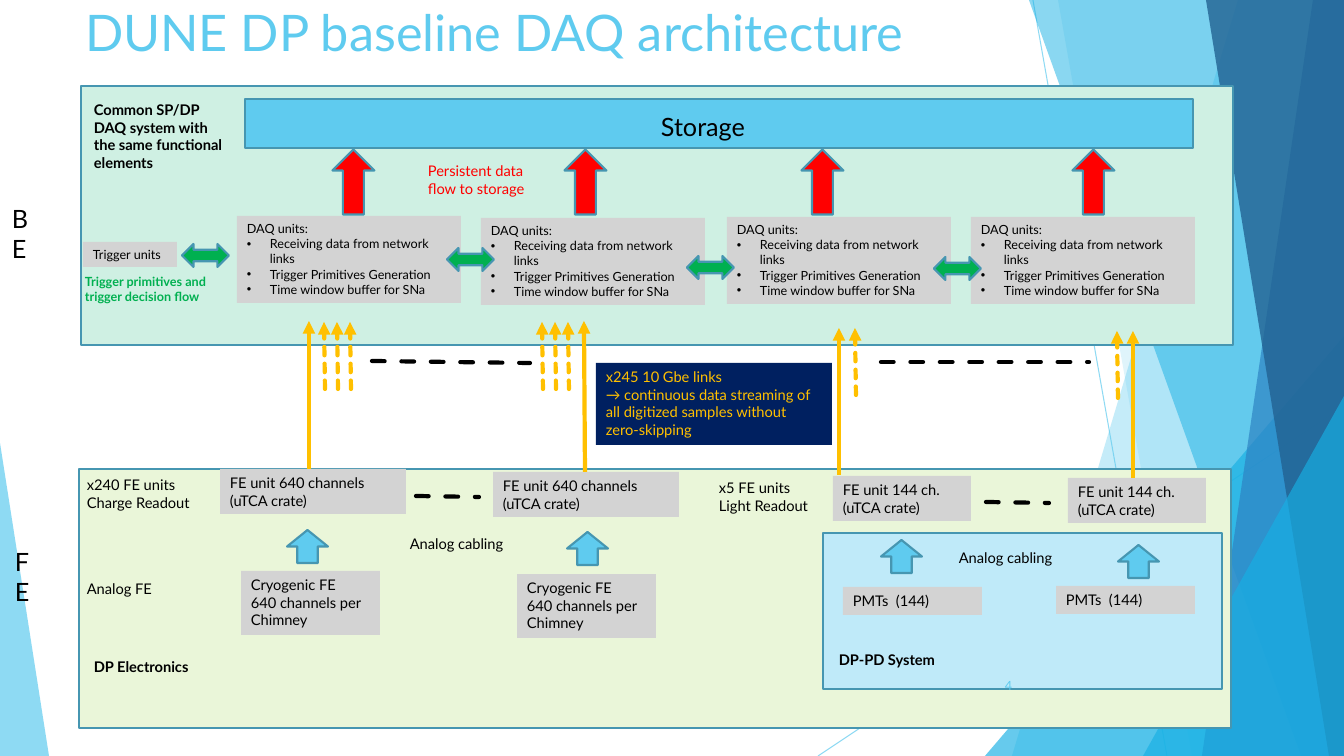
"""Builds the DUNE DP baseline DAQ architecture slide."""
from lxml import etree
from pptx import Presentation
from pptx.dml.color import RGBColor
from pptx.enum.dml import MSO_LINE
from pptx.enum.shapes import MSO_CONNECTOR, MSO_SHAPE
from pptx.enum.text import MSO_ANCHOR, PP_ALIGN
from pptx.oxml.ns import qn
from pptx.util import Pt

RECT, TRIANGLE = MSO_SHAPE.RECTANGLE, MSO_SHAPE.RIGHT_TRIANGLE
TRIANGLE = MSO_SHAPE.ISOSCELES_TRIANGLE
ARROW, TWO_WAY = MSO_SHAPE.RIGHT_ARROW, MSO_SHAPE.LEFT_RIGHT_ARROW
DASH, SHORT_DASH = MSO_LINE.DASH, MSO_LINE.SQUARE_DOT
STRAIGHT = MSO_CONNECTOR.STRAIGHT
TOP, MIDDLE = MSO_ANCHOR.TOP, MSO_ANCHOR.MIDDLE
LEFT, RIGHT = PP_ALIGN.LEFT, PP_ALIGN.RIGHT
PX = 914400 / 100.8


class Theme:
    """Colours, font and type sizes."""
    font = "Lato"
    title, heading, body, small = 36, 18, 10.5, 9
    cyan, azure, blue, deep = "5FCBEF", "17B0E4", "2E83C3", "226292"
    edge, grey, black, navy = "4696B1", "D3D3D3", "000000", "002060"
    red, green, yellow = "FF0000", "00B050", "FFC000"
    front_end, photon, back_end = "EAF6D9", "BFEAF9", "CFF0E3"


def add_box(kind, x, y, w, h, fill=None, outlined=False, paras=(), size=Theme.body,
            color=Theme.black, bold=False, bullets=False):
    """Adds a preset shape, or a text box when kind is None, with its text."""
    frame = [round(v * PX) for v in (x, y, w, h)]
    if kind is None:
        s = slide.shapes.add_textbox(*frame)
    else:
        s = slide.shapes.add_shape(kind, *frame)
        s.shadow.inherit = False
        s.fill.solid()
        s.fill.fore_color.rgb = RGBColor.from_string(fill)
        s.line.fill.background()
    if outlined:
        s.line.color.rgb = RGBColor.from_string(Theme.edge)
        s.line.width = Pt(1.5)
    tf = s.text_frame
    tf.word_wrap = True
    tf.vertical_anchor = TOP
    for i, text in enumerate(paras):
        p = tf.paragraphs[0] if i == 0 else tf.add_paragraph()
        p.alignment = LEFT
        r = p.add_run()
        r.text = text
        r.font.name, r.font.size, r.font.bold = Theme.font, Pt(size), bold
        r.font.color.rgb = RGBColor.from_string(color)
        if bullets and i:
            pPr = p._p.get_or_add_pPr()
            pPr.set("marL", str(round(23 * PX)))
            pPr.set("indent", str(round(-23 * PX)))
            etree.SubElement(pPr, qn("a:buFont"), typeface="Arial")
            etree.SubElement(pPr, qn("a:buChar"), char="•")
    return s


def add_line(x1, y1, x2, y2, color, width=3, dash=None, arrow=False):
    """Adds a straight line, dashed or with an arrowhead if asked."""
    c = slide.shapes.add_connector(STRAIGHT, *[round(v * PX) for v in (x1, y1, x2, y2)])
    c.line.color.rgb = RGBColor.from_string(color)
    c.line.width = Pt(width)
    ln = c.line._get_or_add_ln()
    if dash:
        c.line.dash_style = dash
        ln.set("cap", "rnd")
    if arrow:
        etree.SubElement(ln, qn("a:tailEnd"), type="triangle")
    etree.SubElement(c._element.spPr, qn("a:effectLst"))
    return c


prs = Presentation()
prs.slide_width, prs.slide_height = round(1344 * PX), round(756 * PX)
slide = prs.slides.add_slide(prs.slide_layouts[5])

title = slide.shapes.title
title.left, title.top, title.width, title.height = [round(v * PX) for v in (75, -4, 948, 145)]
tf = title.text_frame
tf.word_wrap, tf.vertical_anchor = True, TOP
p = tf.paragraphs[0]
p.alignment = LEFT
r = p.add_run()
r.text = "DUNE DP baseline DAQ architecture"
r.font.name, r.font.size = Theme.font, Pt(Theme.title)
r.font.color.rgb = RGBColor.from_string(Theme.cyan)

backdrop = [(add_line(*ends, Theme.cyan, 0.75), 70)
            for ends in ((1033, 0, 1167, 756), (1344, 406, 818, 756))]
for top_x, bottom_x, color, opacity in (
        (1238, 1012, Theme.cyan, 36), (1058, 1192, Theme.cyan, 20),
        (None, 985, Theme.azure, 66), (1029, 1301, Theme.azure, 50),
        (1313, 1202, Theme.blue, 70), (1206, 1329, Theme.deep, 80),
        (None, 1143, Theme.azure, 66), (None, 0, Theme.cyan, 70)):
    if top_x is None:
        y, right, apex = {985: (336, 1344, 1), 1143: (396, 1344, 1), 0: (443, 49, 0)}[bottom_x]
        s = add_box(TRIANGLE, bottom_x, y, right - bottom_x, 756 - y, color)
        s.adjustments[0] = apex
    else:
        outline = slide.shapes.build_freeform(top_x, 0, scale=PX)
        outline.add_line_segments([(1344, 0), (1344, 756), (bottom_x, 756)])
        s = outline.convert_to_shape()
        s.shadow.inherit = False
        s.fill.solid()
        s.fill.fore_color.rgb = RGBColor.from_string(color)
        s.line.fill.background()
    backdrop.append((s, opacity))
for s, opacity in backdrop:
    for clr in s._element.spPr.iter(qn("a:srgbClr")):
        etree.SubElement(clr, qn("a:alpha"), val=str(opacity * 1000))

for x, y, w, h, fill in ((79, 469, 1152, 259, Theme.front_end),
                         (823, 533, 399, 156, Theme.photon),
                         (81, 86, 1152, 259, Theme.back_end)):
    add_box(RECT, x, y, w, h, fill, True)

charge = ["FE unit 640 channels", "(uTCA crate)"]
light = ["FE unit 144 ch.", "(uTCA crate)"]
cryogenic = ["Cryogenic FE", "640 channels per Chimney"]
pmts = ["PMTs  (144)"]
for x, y, w, h, paras in (
        (220, 469, 186, 45, charge), (493, 472, 186, 45, charge),
        (833, 476, 138, 45, light), (1068, 478, 138, 45, light),
        (241, 571, 139, 64, cryogenic), (517, 574, 139, 64, cryogenic),
        (843, 587, 139, 28, pmts), (1056, 586, 139, 28, pmts)):
    add_box(RECT, x, y, w, h, Theme.grey, paras=paras)

for x, y in ((291, 526), (571, 528), (885, 536), (1122, 541)):
    add_box(ARROW, x, y, 33, 41, Theme.cyan, True).rotation = 270

daq_unit = ["DAQ units:", "Receiving data from network links",
            "Trigger Primitives Generation", "Time window buffer for SNa"]
for x, y in ((237, 216), (481, 218), (727, 217), (971, 217)):
    add_box(RECT, x, y, 224, 87, Theme.grey, paras=daq_unit, size=Theme.small, bullets=True)
add_box(RECT, 83, 242, 94, 25, Theme.grey, paras=["Trigger units"], size=Theme.small)
add_box(RECT, 596, 363, 236, 82, Theme.navy, color=Theme.yellow, paras=[
    "x245 10 Gbe links", "→ continuous data streaming of all digitized samples without",
    "zero-skipping"])
add_box(RECT, 245, 99, 948, 49, Theme.cyan, True)

for x in (321, 553, 790, 1061):
    add_box(ARROW, x, 161, 65, 42, Theme.red, True).rotation = 270
for x, y in ((182, 244), (447, 248), (687, 256), (934, 257)):
    add_box(TWO_WAY, x, y, 47, 23, Theme.green, True)

for ends in ((416, 496, 479, 497), (986, 502, 1049, 503),
             (372, 361, 530, 363), (881, 362, 1089, 362)):
    add_line(*ends, Theme.black, dash=DASH)
for x, y in [(first + 13 * i, 389) for first in (325, 543) for i in range(3)] + [
        (856, 395), (1118, 398)]:
    add_line(x, y, x - 1, y - 67, Theme.yellow, dash=SHORT_DASH, arrow=True)
for ends in ((309, 469, 309, 321), (585, 472, 584, 321),
             (839, 475, 839, 328), (1133, 478, 1133, 331)):
    add_line(*ends, Theme.yellow, arrow=True)

for x, y, w, h, paras, size, color, bold in (
        (77, 471, 143, 45, ["x240 FE units", "Charge Readout"], Theme.body, Theme.black, False),
        (709, 474, 143, 45, ["x5 FE units", "Light Readout"], Theme.body, Theme.black, False),
        (77, 575, 143, 28, ["Analog FE"], Theme.body, Theme.black, False),
        (400, 530, 117, 28, ["Analog cabling"], Theme.body, Theme.black, False),
        (949, 544, 117, 28, ["Analog cabling"], Theme.body, Theme.black, False),
        (651, 106, 168, 40, ["Storage"], Theme.heading, Theme.black, False),
        (75, 269, 151, 40, ["Trigger primitives and trigger decision flow"],
         Theme.small, Theme.green, True),
        (418, 157, 143, 45, ["Persistent data flow to storage"], Theme.body, Theme.red, False),
        (84, 96, 160, 82, ["Common SP/DP", "DAQ system with  the same functional elements"],
         Theme.body, Theme.black, True),
        (84, 653, 160, 28, ["DP Electronics"], Theme.body, Theme.black, True),
        (829, 646, 160, 28, ["DP-PD System"], Theme.body, Theme.black, True)):
    add_box(None, x, y, w, h, paras=paras, size=size, color=color, bold=bold)

for x, y, label in ((5, 541, "FE"), (2, 198, "BE")):
    s = add_box(None, x, y, 48, 40, paras=[label], size=Theme.heading)
    s.text_frame.margin_right = round(18 * PX)

s = add_box(None, 946, 666, 76, 40, paras=["4"], size=Theme.small, color=Theme.cyan)
s.text_frame.vertical_anchor = MIDDLE
s.text_frame.paragraphs[0].alignment = RIGHT

prs.save("out.pptx")
